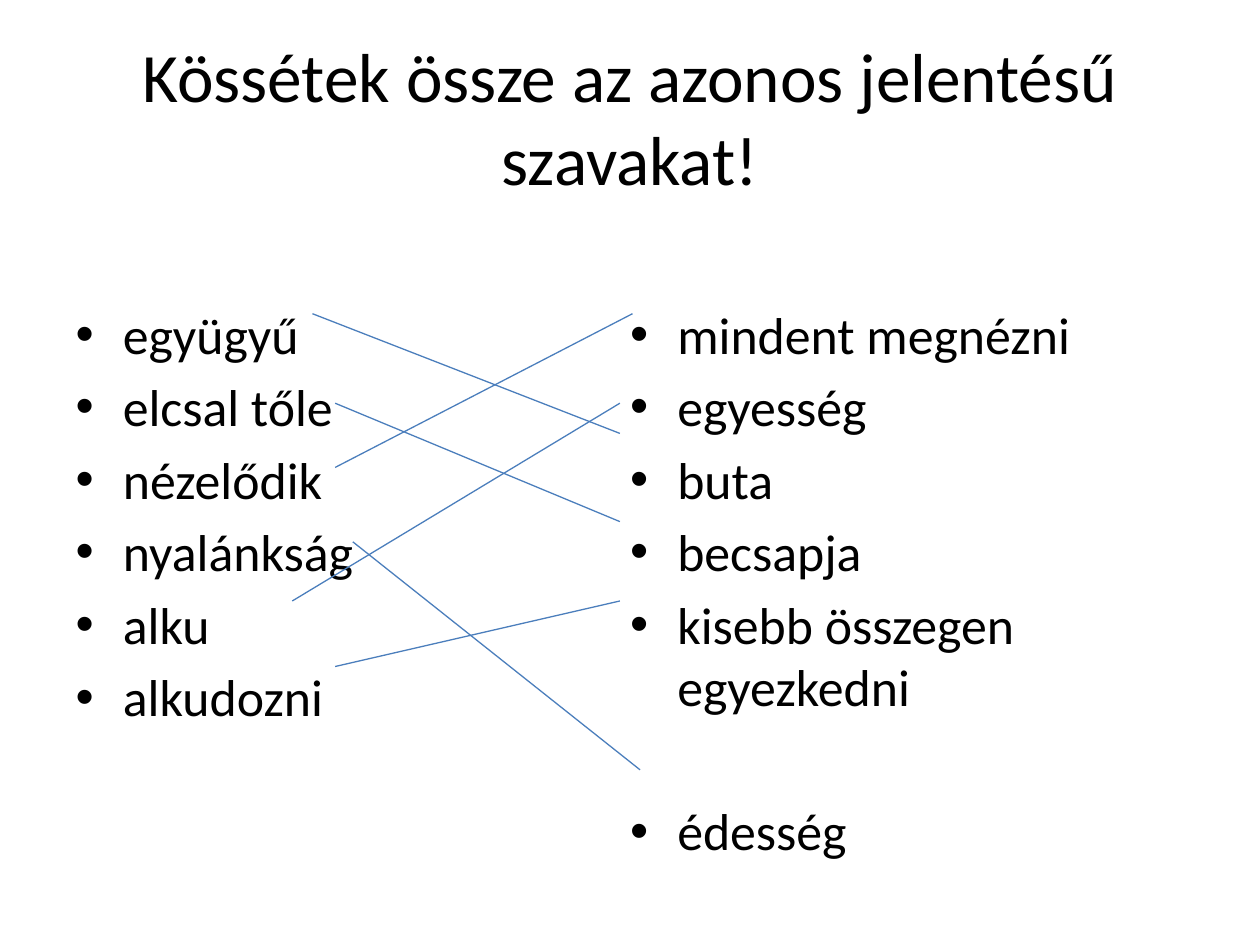
"""Build a Hungarian word-matching slide with two lists joined by lines."""
from pptx import Presentation
from pptx import util as u
from pptx.dml.color import RGBColor
from pptx.enum import shapes, text
from pptx.oxml.ns import qn
from lxml import etree

BLACK = RGBColor(0x00, 0x00, 0x00)
BLUE = RGBColor(0x4B, 0x7E, 0xBC)
WHITE = RGBColor(0xFF, 0xFF, 0xFF)

TITLE = "Kössétek össze az azonos jelentésű szavakat!"
WORDS = ["együgyű", "elcsal tőle", "nézelődik", "nyalánkság", "alku", "alkudozni"]
MEANINGS = ["mindent megnézni", "egyesség", "buta", "becsapja",
            "kisebb összegen egyezkedni", "édesség"]
MATCHES = [
    (2.48, 2.49, 4.92, 3.44),
    (2.66, 3.2, 4.92, 4.14),
    (2.66, 3.71, 5.02, 2.49),
    (2.8, 4.3, 5.08, 6.11),
    (2.32, 4.77, 4.92, 3.2),
    (2.66, 5.29, 4.92, 4.77),
]


class SlideBuilder:
    """Hold the slide and its style, and add each kind of element."""

    font_name = "Calibri"
    title_size = u.Pt(39.6)
    list_size = u.Pt(29.6)

    def __init__(self, slide):
        self.slide = slide
        slide.background.fill.solid()
        slide.background.fill.fore_color.rgb = WHITE

    def fill_placeholder(self, index, box, lines, size):
        """Place a placeholder, write its lines and return its paragraphs."""
        shape = self.slide.placeholders[index]
        shape.left, shape.top, shape.width, shape.height = map(u.Inches, box)
        frame = shape.text_frame
        frame.text = "\n".join(lines)
        frame.word_wrap = True
        frame.auto_size = text.MSO_AUTO_SIZE.NONE
        for paragraph in frame.paragraphs:
            paragraph.font.name = self.font_name
            paragraph.font.size = size
            paragraph.font.color.rgb = BLACK
        return frame.paragraphs

    def title(self, box, wording):
        """Write the centred title."""
        paragraph = self.fill_placeholder(0, box, [wording], self.title_size)[0]
        paragraph.alignment = text.PP_ALIGN.CENTER

    def bullets(self, index, box, lines):
        """Write a bulleted list."""
        return self.fill_placeholder(index, box, lines, self.list_size)

    def line(self, *ends):
        """Draw a thin line between two points."""
        connector = self.slide.shapes.add_connector(
            shapes.MSO_CONNECTOR.STRAIGHT, *map(u.Inches, ends))
        connector.line.color.rgb = BLUE
        connector.line.width = u.Pt(0.75)
        etree.SubElement(connector._element.spPr, qn("a:effectLst"))


def main():
    """Build and save the presentation."""
    presentation = Presentation()
    presentation.slide_width = u.Inches(10)
    presentation.slide_height = u.Inches(7.5)
    layout = presentation.slide_layouts[3]
    builder = SlideBuilder(presentation.slides.add_slide(layout))

    builder.title((0.5, 0.3, 9, 1.25), TITLE)
    builder.bullets(1, (0.5, 2.35, 4.4, 4.5), WORDS)
    meanings = builder.bullets(2, (4.9, 2.35, 4.6, 4.5), MEANINGS)
    meanings[-1].space_before = u.Pt(47)
    for ends in MATCHES:
        builder.line(*ends)

    presentation.save("out.pptx")


if __name__ == "__main__":
    main()
